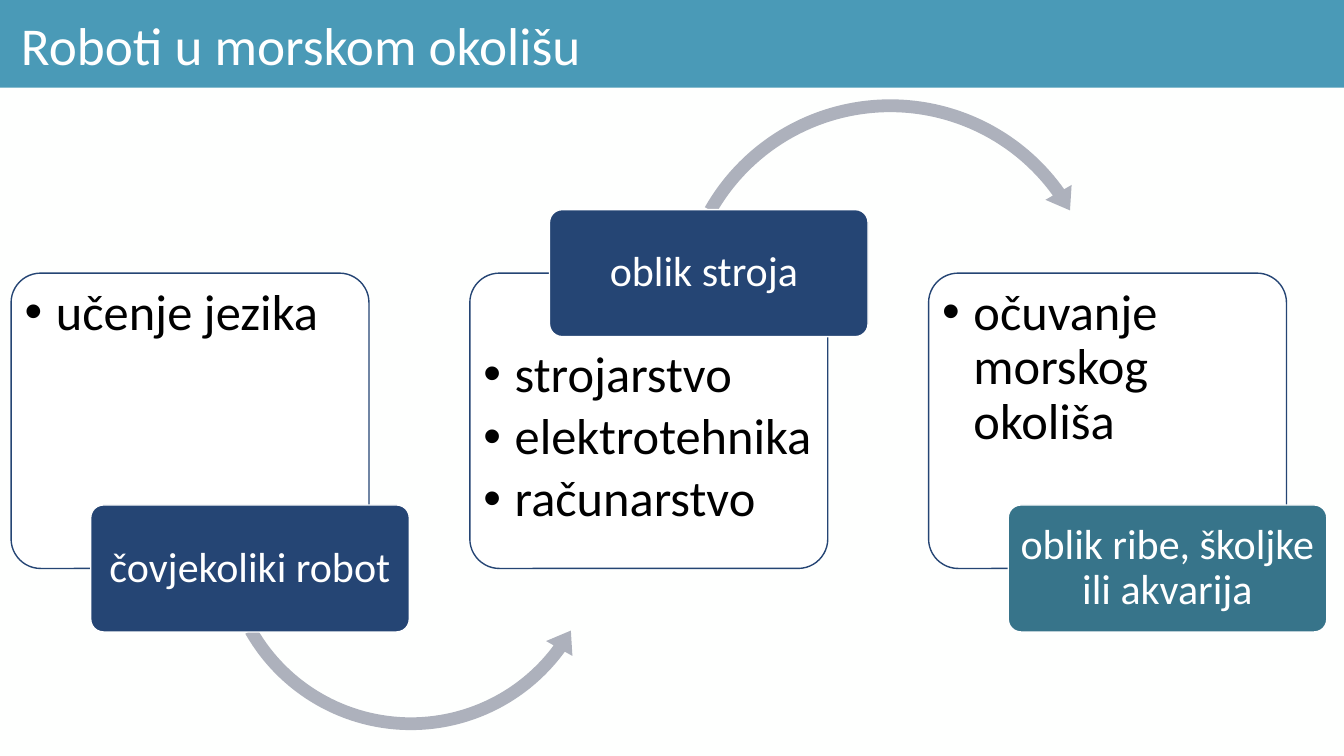
from lxml.etree import SubElement
from pptx import Presentation
from pptx.dml.color import RGBColor
from pptx.enum.shapes import MSO_SHAPE
from pptx.enum.text import MSO_ANCHOR, PP_ALIGN
from pptx.oxml.ns import qn
from pptx.util import Inches, Pt

NAVY, TEAL, WHITE, GREY, BLACK = "254574", "37748A", "FFFFFF", "ADB1BC", "000000"
BAND, PAPER = "4A9AB7", "FEFFFE"


def color(code):
    return RGBColor.from_string(code)


class RobotSlide:
    font = "Calibri"

    def __init__(self, deck):
        self.slide = deck.slides.add_slide(deck.slide_layouts[6])
        background = self.slide.background.fill
        background.solid()
        background.fore_color.rgb = color(PAPER)

    def shape(self, kind, box, fill, line=None, adjustments=()):
        shape = self.slide.shapes.add_shape(kind, *map(Inches, box))
        shape.shadow.inherit = False
        shape.fill.solid()
        shape.fill.fore_color.rgb = color(fill)
        if line:
            shape.line.color.rgb = color(line)
            shape.line.width = Pt(1)
        else:
            shape.line.fill.background()
        for index, value in enumerate(adjustments):
            shape.adjustments[index] = value
        return shape

    def add_text(self, shape, lines, size, ink, insets, anchor=MSO_ANCHOR.MIDDLE,
                 align=PP_ALIGN.LEFT, bulleted=False):
        frame = shape.text_frame
        frame.word_wrap = True
        frame.vertical_anchor = anchor
        (frame.margin_left, frame.margin_top,
         frame.margin_right, frame.margin_bottom) = map(Inches, insets)
        frame.text = "\n".join(lines)
        for paragraph in frame.paragraphs:
            if bulleted:
                properties = paragraph._p.get_or_add_pPr()
                properties.set("marL", str(Inches(0.31)))
                properties.set("indent", str(-Inches(0.31)))
                SubElement(properties, qn("a:buFont"), typeface="Arial")
                SubElement(properties, qn("a:buChar"), char="•")
                paragraph.space_after = Pt(5.4)
            paragraph.alignment = align
            paragraph.line_spacing = 0.9
            paragraph.font.name = self.font
            paragraph.font.size = Pt(size)
            paragraph.font.color.rgb = color(ink)

    def title(self, text):
        self.shape(MSO_SHAPE.RECTANGLE, (0, 0, 13.33, 0.87), BAND)
        heading = self.slide.shapes.add_textbox(
            Inches(0.11), Inches(0.09), Inches(13.06), Inches(0.78))
        self.add_text(heading, [text], 38, WHITE, (0.1, 0.06, 0.06, 0.06))

    def card(self, left, topics, text_top):
        card = self.shape(MSO_SHAPE.ROUNDED_RECTANGLE, (left, 2.71, 3.55, 2.93),
                          WHITE, NAVY, [0.1])
        self.add_text(card, topics, 36, BLACK, (0.05, text_top, 0.05, 0.05),
                      MSO_ANCHOR.TOP, bulleted=True)

    def label(self, left, top, text, fill):
        label = self.shape(MSO_SHAPE.ROUNDED_RECTANGLE, (left, top, 3.16, 1.26),
                           fill, WHITE, [0.1])
        self.add_text(label, [text], 30, WHITE, (0.06, 0.04, 0.06, 0.04),
                      align=PP_ALIGN.CENTER)

    def arrow(self, kind, left, top, size, adjustments):
        self.shape(kind, (left, top, size, size), GREY, adjustments=adjustments)


def main():
    deck = Presentation()
    deck.slide_width, deck.slide_height = Inches(13.33), Inches(7.5)
    robots = RobotSlide(deck)
    robots.title("Roboti u morskom okolišu")

    lower_arrow = (MSO_SHAPE.LEFT_CIRCULAR_ARROW, 2.1, 3.38, 3.95,
                   (0.032, 3.988, 21.743, 90.245, 0.038))
    upper_arrow = (MSO_SHAPE.CIRCULAR_ARROW, 6.63, 0.9, 4.4,
                   (0.029, 3.549, 194.696, 125.755, 0.034))
    stages = [
        (["učenje jezika"], "čovjekoliki robot", NAVY, False, lower_arrow),
        (["strojarstvo", "elektrotehnika", "računarstvo"], "oblik stroja ",
         NAVY, True, upper_arrow),
        (["očuvanje morskog okoliša"], "oblik ribe, školjke ili akvarija",
         TEAL, False, None),
    ]
    for index, (topics, robot_form, fill, label_above, arrow) in enumerate(stages):
        left = 0.11 + 4.55 * index
        robots.card(left, topics, 0.67 if label_above else 0.05)
        if arrow:
            robots.arrow(*arrow)
        robots.label(left + 0.79, 2.08 if label_above else 5.01, robot_form, fill)

    deck.save("out.pptx")


if __name__ == "__main__":
    main()
